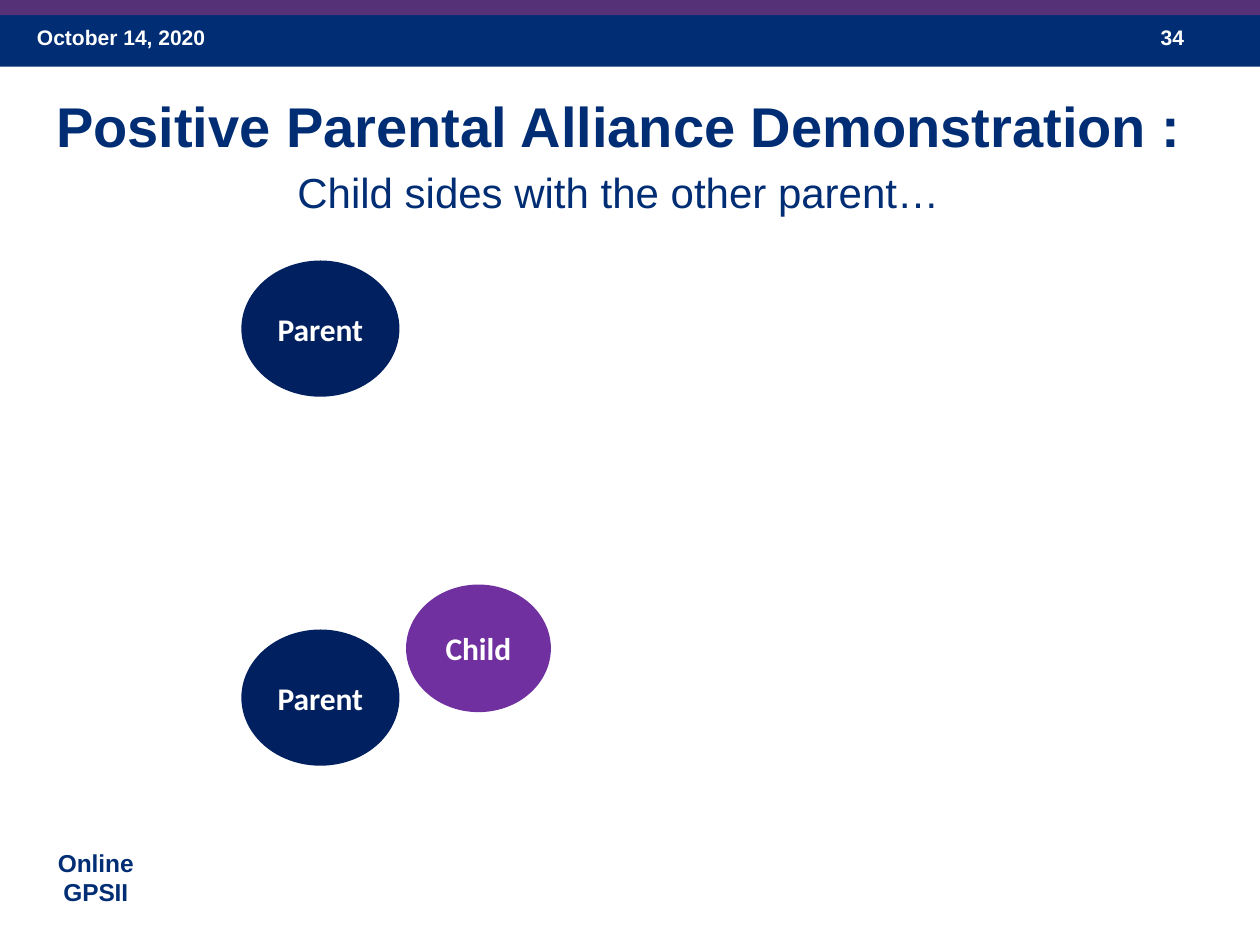
"""Build the slide on the positive parental alliance demonstration."""
from pptx import Presentation
from pptx.dml.color import RGBColor
from pptx.enum.shapes import MSO_SHAPE
from pptx.enum.text import MSO_ANCHOR, MSO_AUTO_SIZE, PP_ALIGN
from pptx.util import Cm, Pt

NAVY = RGBColor(0x00, 0x2D, 0x73)
PLUM = RGBColor(0x55, 0x32, 0x78)
PARENT_BLUE = RGBColor(0x00, 0x20, 0x60)
CHILD_PURPLE = RGBColor(0x70, 0x30, 0xA0)
WHITE = RGBColor(0xFF, 0xFF, 0xFF)


def write(frame, lines, size, color, bold=True, align=PP_ALIGN.CENTER, font="Arial"):
    frame.word_wrap = True
    frame.text = "\n".join(lines)
    for para in frame.paragraphs:
        para.alignment = align
        para.font.name = font
        para.font.size = Pt(size)
        para.font.bold = bold
        para.font.color.rgb = color


def add_filled(page, kind, left, top, width, height, color):
    shape = page.shapes.add_shape(kind, Cm(left), Cm(top), Cm(width), Cm(height))
    shape.shadow.inherit = False
    shape.fill.solid()
    shape.fill.fore_color.rgb = color
    shape.line.fill.background()
    return shape


def add_person(page, label, left, top, width, height, color):
    circle = add_filled(page, MSO_SHAPE.FLOWCHART_CONNECTOR, left, top, width, height, color)
    frame = circle.text_frame
    frame.margin_left = frame.margin_right = Cm(0.18)
    frame.margin_top = frame.margin_bottom = Cm(0.1)
    frame.vertical_anchor = MSO_ANCHOR.MIDDLE
    write(frame, [label], 13.5, WHITE, font="Calibri")


def add_label(page, lines, left, top, width, height, size, color, align):
    box = page.shapes.add_textbox(Cm(left), Cm(top), Cm(width), Cm(height))
    write(box.text_frame, lines, size, color, align=align)


def fill_heading(holder, text, top, height, size, bold):
    holder.left, holder.top = Cm(0.31), Cm(top)
    holder.width, holder.height = Cm(18.08), Cm(height)
    frame = holder.text_frame
    frame.auto_size = MSO_AUTO_SIZE.NONE
    frame.vertical_anchor = MSO_ANCHOR.MIDDLE
    frame.margin_top = frame.margin_bottom = 0
    write(frame, [text], size, NAVY, bold)
    frame.paragraphs[0].space_before = Pt(0)


def main():
    deck = Presentation()
    deck.slide_width, deck.slide_height = Cm(19.05), Cm(14.29)
    page = deck.slides.add_slide(deck.slide_layouts[0])

    add_filled(page, MSO_SHAPE.RECTANGLE, 0, 0.18, 19.05, 0.83, NAVY)
    add_filled(page, MSO_SHAPE.RECTANGLE, 0, 0, 19.05, 0.23, PLUM)
    add_label(page, ["October 14, 2020"], 0.31, 0.25, 4.45, 0.76, 9, WHITE, PP_ALIGN.LEFT)
    add_label(page, ["34"], 17.3, 0.25, 1.42, 0.76, 9, WHITE, PP_ALIGN.LEFT)
    add_label(page, ["Online", "GPSII"], 0.56, 12.7, 1.78, 1.02, 10.5, NAVY, PP_ALIGN.CENTER)

    title, subtitle = page.placeholders
    fill_heading(title, "Positive Parental Alliance Demonstration :", 1.34, 1.1, 24, True)
    fill_heading(subtitle, "Child sides with the other parent…", 2.45, 0.9, 18, False)

    for top in (3.94, 9.52):
        add_person(page, "Parent", 3.65, top, 2.39, 2.06, PARENT_BLUE)
    add_person(page, "Child", 6.14, 8.84, 2.19, 1.93, CHILD_PURPLE)

    deck.save("out.pptx")


if __name__ == "__main__":
    main()
